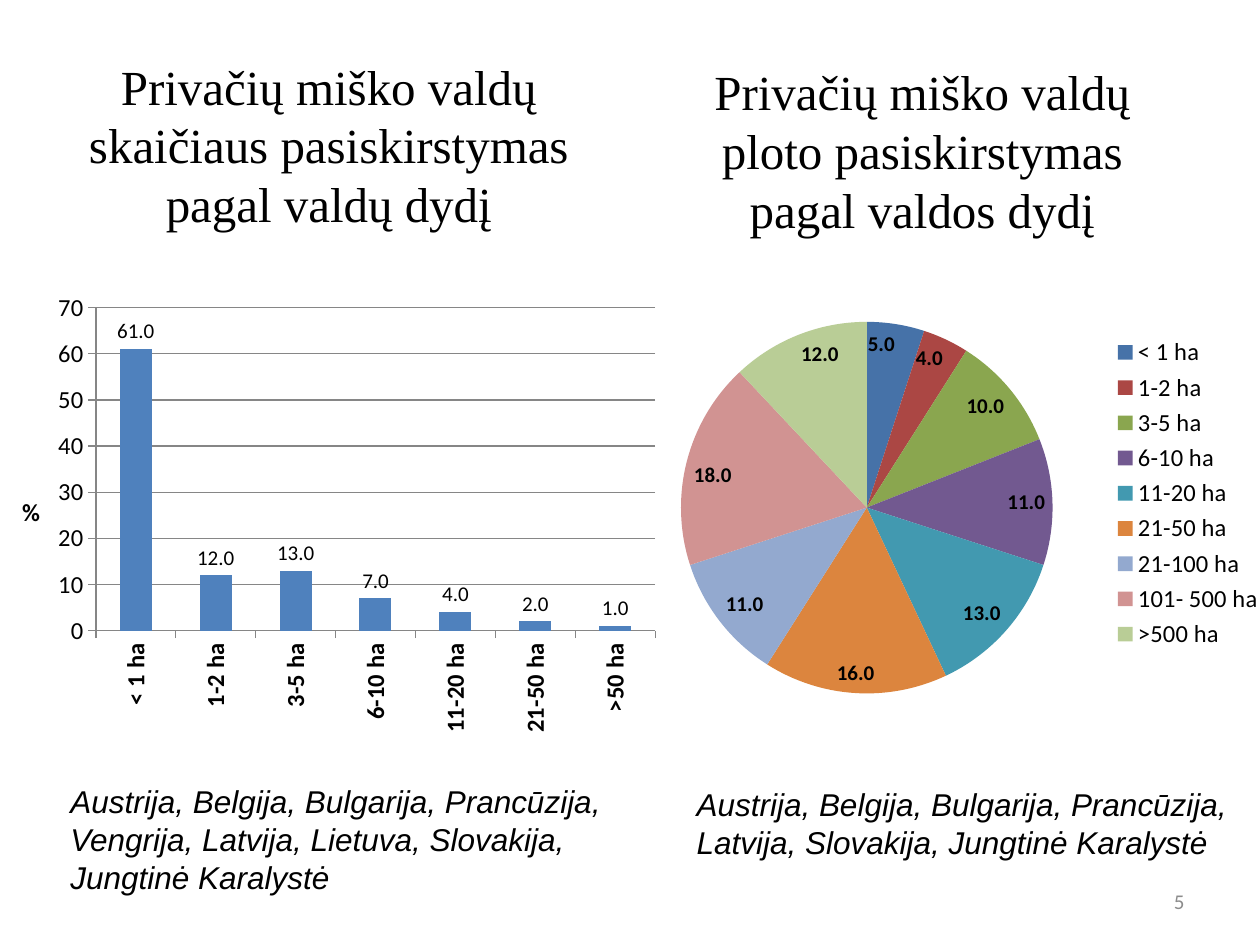
from pptx import Presentation
from pptx.chart.data import CategoryChartData
from pptx.dml.color import RGBColor
from pptx.enum.chart import XL_CHART_TYPE as ChartType
from pptx.enum.chart import XL_LABEL_POSITION as LabelPosition
from pptx.enum.chart import XL_LEGEND_POSITION as LegendPosition
from pptx.enum.chart import XL_TICK_MARK as TickMark
from pptx.enum.text import MSO_ANCHOR as Anchor
from pptx.enum.text import MSO_AUTO_SIZE as AutoSize
from pptx.enum.text import PP_ALIGN as Align
from pptx.oxml import parse_xml
from pptx.oxml.ns import nsdecls
from pptx.util import Inches, Pt

COLORS = {"text": "000000", "number": "8C8C8C", "bar": "4F81BD", "axis": "868686"}
PIE_COLORS = ["4672A8", "AB4744", "8AA64F", "725990", "4299B0",
              "DC853E", "93A9CF", "D19392", "B9CD96"]
HOLDING_COUNTS = {"< 1 ha": 61, "1-2 ha": 12, "3-5 ha": 13, "6-10 ha": 7,
                  "11-20 ha": 4, "21-50 ha": 2, ">50 ha": 1}
HOLDING_AREAS = {"< 1 ha": 5, "1-2 ha": 4, "3-5 ha": 10, "6-10 ha": 11,
                 "11-20 ha": 13, "21-50 ha": 16, "21-100 ha": 11,
                 "101- 500 ha": 18, ">500 ha": 12}


def rgb(value):
    return RGBColor.from_string(value)


def style_font(font, size, name="Calibri", color=COLORS["text"], bold=False, italic=False):
    font.size, font.name = Pt(size), name
    font.bold, font.italic = bold, italic
    font.color.rgb = rgb(color)


def write_text(shape, text, size, name, align=Align.LEFT, anchor=Anchor.TOP,
               color=COLORS["text"], italic=False):
    frame = shape.text_frame
    frame.word_wrap = True
    frame.auto_size = AutoSize.NONE
    frame.vertical_anchor = anchor
    para = frame.paragraphs[0]
    para.alignment = align
    span = para.add_run()
    span.text = text
    style_font(span.font, size, name, color, italic=italic)


def add_text(page, box, *args, **options):
    shape = page.shapes.add_textbox(*map(Inches, box))
    write_text(shape, *args, **options)


def add_heading(page, box, text):
    title = page.shapes.title
    title.left, title.top, title.width, title.height = map(Inches, box)
    write_text(title, text, 28, "Times New Roman", Align.CENTER, Anchor.MIDDLE)


def set_plot_area(chart, box):
    area = chart.element.xpath("c:chart/c:plotArea")[0]
    for layout in area.xpath("c:layout"):
        area.remove(layout)
    modes = '<c:xMode val="edge"/><c:yMode val="edge"/>'
    sizes = "".join(f'<c:{key} val="{value}"/>' for key, value in zip("xywh", box))
    area.insert(0, parse_xml(
        f'<c:layout {nsdecls("c")}><c:manualLayout><c:layoutTarget val="inner"/>'
        f'{modes}{sizes}</c:manualLayout></c:layout>'))


def add_chart(page, box, kind, shares, plot_box, label_position, bold_labels):
    data = CategoryChartData(number_format="0.0")
    data.categories = list(shares)
    data.add_series("Series 1", list(shares.values()))
    chart = page.shapes.add_chart(kind, *map(Inches, box), data).chart
    chart.has_title = False
    chart.has_legend = False
    style_font(chart.font, 10)
    set_plot_area(chart, plot_box)
    plot = chart.plots[0]
    plot.has_data_labels = True
    labels = plot.data_labels
    labels.show_value = True
    labels.number_format = "0.0"
    labels.number_format_is_linked = False
    labels.position = label_position
    style_font(labels.font, 12, bold=bold_labels)
    return chart


def add_count_chart(page, box):
    chart = add_chart(page, box, ChartType.COLUMN_CLUSTERED, HOLDING_COUNTS,
                      (0.134, 0.051, 0.836, 0.684), LabelPosition.OUTSIDE_END, False)
    plot = chart.plots[0]
    plot.gap_width = 150
    plot.vary_by_categories = False
    fill = plot.series[0].format.fill
    fill.solid()
    fill.fore_color.rgb = rgb(COLORS["bar"])

    values, categories = chart.value_axis, chart.category_axis
    values.minimum_scale, values.maximum_scale, values.major_unit = 0, 70, 10
    values.has_major_gridlines = True
    values.tick_labels.number_format = "0"
    values.tick_labels.number_format_is_linked = False
    for axis in (values, categories):
        axis.major_tick_mark = TickMark.OUTSIDE
        style_font(axis.tick_labels.font, 14, bold=axis is categories)
    for line in (values.format.line, categories.format.line,
                 values.major_gridlines.format.line):
        line.color.rgb = rgb(COLORS["axis"])
        line.width = Pt(0.75)

    span = values.axis_title.text_frame.paragraphs[0].add_run()
    span.text = "%"
    style_font(span.font, 14, bold=True)
    for query, angle in ((".//c:valAx/c:title//a:bodyPr", "0"),
                         (".//c:catAx/c:txPr/a:bodyPr", "-5400000")):
        body = chart.element.xpath(query)[0]
        body.set("rot", angle)
        body.set("vert", "horz")


def add_area_chart(page, box):
    chart = add_chart(page, box, ChartType.PIE, HOLDING_AREAS,
                      (0.055, 0.108, 0.59, 0.85), LabelPosition.INSIDE_END, True)
    chart.has_legend = True
    chart.legend.position = LegendPosition.RIGHT
    chart.legend.include_in_layout = False
    style_font(chart.legend.font, 14)
    plot = chart.plots[0]
    plot.vary_by_categories = True
    for index, color in enumerate(PIE_COLORS):
        fill = plot.series[0].points[index].format.fill
        fill.solid()
        fill.fore_color.rgb = rgb(color)


def build_slide(deck):
    page = deck.slides.add_slide(deck.slide_layouts[5])
    add_heading(page, (0.28, 0.52, 4.66, 1.25),
                "Privačių miško valdų skaičiaus pasiskirstymas pagal valdų dydį")
    add_text(page, (7.17, 6.95, 2.33, 0.4), "5", 12, "Calibri", Align.RIGHT,
             Anchor.MIDDLE, COLORS["number"])
    add_text(page, (0.46, 6.16, 4.72, 1.01),
             "Austrija, Belgija, Bulgarija, Prancūzija, Vengrija, Latvija, "
             "Lietuva, Slovakija, Jungtinė Karalystė", 18, "Arial", italic=True)
    add_count_chart(page, (0.05, 2.25, 5.31, 3.75))
    add_area_chart(page, (5.13, 2.18, 5, 3.47))
    add_text(page, (5.43, 6.18, 4.41, 0.71),
             "Austrija, Belgija, Bulgarija, Prancūzija, Latvija, Slovakija, "
             "Jungtinė Karalystė", 18, "Arial", italic=True)
    add_text(page, (5.39, 0.44, 3.86, 1.51),
             "Privačių miško valdų ploto pasiskirstymas pagal valdos dydį",
             28, "Times New Roman", Align.CENTER)


def main():
    deck = Presentation()
    deck.slide_width, deck.slide_height = Inches(10), Inches(7.5)
    build_slide(deck)
    deck.save("out.pptx")


if __name__ == "__main__":
    main()
